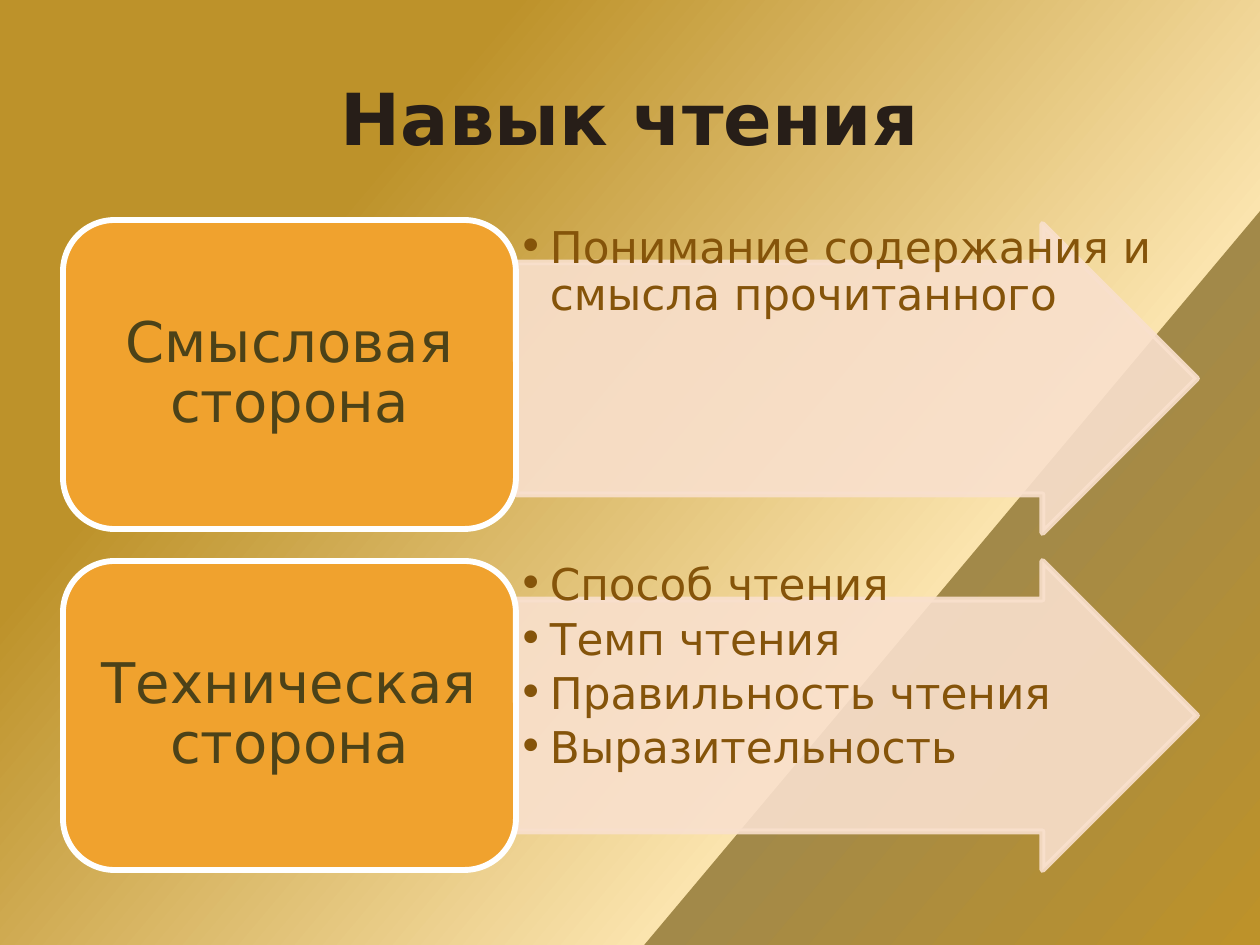
from lxml import etree
from pptx import Presentation
from pptx.dml.color import RGBColor
from pptx.enum.shapes import MSO_SHAPE
from pptx.enum.text import MSO_ANCHOR, PP_ALIGN
from pptx.oxml.ns import qn
from pptx.util import Emu, Pt

ROUNDED = MSO_SHAPE.ROUNDED_RECTANGLE
ARROW = MSO_SHAPE.RIGHT_ARROW
CENTER, LEFT = PP_ALIGN.CENTER, PP_ALIGN.LEFT
TOP, MIDDLE = MSO_ANCHOR.TOP, MSO_ANCHOR.MIDDLE

PX = 914400 // 126
FONT = "DejaVu Sans"
TITLE_ONLY = 5
LINE_WIDTH = Pt(3.35)

# Position in percent and colour; the repeated position makes the sharp edge
BACKGROUND_STOPS = [(0, "BD922A"), (25, "BD922A"), (70, "FBE4AE"),
                    (70, "A28949"), (100, "BD922A")]
BACKGROUND_ANGLE = 40

# Label, bullets, top of the label, drop of the arrow below that top
ROWS = [
    ("Смысловая сторона", ["Понимание содержания и смысла прочитанного"], 220, 4),
    ("Техническая сторона", ["Способ чтения", "Темп чтения", "Правильность чтения",
                             "Выразительность"], 561, 0),
]


def px(value):
    return Emu(value * PX)


def rgb(color):
    return RGBColor.from_string(color)


def place(shape, left, top, width, height):
    shape.left, shape.top = px(left), px(top)
    shape.width, shape.height = px(width), px(height)


def paint_background(slide):
    fill = slide.background.fill
    fill.gradient()
    gradient = slide.background._cSld.find(".//" + qn("a:gradFill"))
    for child in list(gradient):
        gradient.remove(child)
    stops = etree.SubElement(gradient, qn("a:gsLst"))
    for position, color in BACKGROUND_STOPS:
        stop = etree.SubElement(stops, qn("a:gs"), pos=str(position * 1000))
        etree.SubElement(stop, qn("a:srgbClr"), val=color)
    etree.SubElement(gradient, qn("a:lin"), ang=str(BACKGROUND_ANGLE * 60000), scaled="0")


def write(shape, lines, size, color, align, anchor, insets, bold=False, spacing=None):
    frame = shape.text_frame
    frame.word_wrap = True
    frame.vertical_anchor = anchor
    frame.margin_left = frame.margin_right = px(insets[0])
    frame.margin_top = frame.margin_bottom = px(insets[1])
    frame.text = "\n".join(lines)
    for paragraph in frame.paragraphs:
        paragraph.alignment = align
        paragraph.line_spacing = spacing
        for run in paragraph.runs:
            run.font.name, run.font.size, run.font.bold = FONT, Pt(size), bold
            run.font.color.rgb = rgb(color)


def add_bullets(shape, indent):
    for paragraph in shape.text_frame.paragraphs:
        paragraph.space_after = Pt(4)
        properties = paragraph._p.get_or_add_pPr()
        properties.set("marL", str(px(indent)))
        properties.set("indent", str(-px(indent)))
        etree.SubElement(properties, qn("a:buFont"), typeface=FONT)
        etree.SubElement(properties, qn("a:buChar"), char="•")


def add_block(slide, kind, box, fill, line, opacity=100):
    shape = slide.shapes.add_shape(kind, *map(px, box))
    shape.shadow.inherit = False
    shape.fill.solid()
    shape.fill.fore_color.rgb = rgb(fill)
    shape.line.color.rgb = rgb(line)
    shape.line.width = LINE_WIDTH
    if opacity < 100:
        for color in shape._element.spPr.iter(qn("a:srgbClr")):
            etree.SubElement(color, qn("a:alpha"), val=str(opacity * 1000))
    return shape


def add_title(slide, text, box):
    title = slide.shapes.title
    place(title, *box)
    write(title, [text], 41, "271E18", CENTER, MIDDLE, (12, 6), bold=True)


def add_row(slide, label, bullets, box, arrow_drop):
    left, top, width, height = box
    label_width = width * 2 // 5
    arrow_box = (left + label_width, top + arrow_drop, width - label_width, height)

    # Arrow with the bullets over its full box
    arrow = add_block(slide, ARROW, arrow_box, "F9E0CD", "F9E0CD", opacity=90)
    arrow.adjustments[0], arrow.adjustments[1] = 0.75, 0.5
    details = slide.shapes.add_textbox(*map(px, arrow_box))
    write(details, bullets, 25, "85540A", LEFT, TOP, (2, 2), spacing=0.9)
    add_bullets(details, 32)

    # Rounded label
    block = add_block(slide, ROUNDED, (left, top, label_width, height), "F0A22E", "FFFFFF")
    write(block, [label], 32, "4C4218", CENTER, MIDDLE, (2, 2), spacing=0.9)


def main():
    presentation = Presentation()
    presentation.slide_width, presentation.slide_height = px(1260), px(945)
    slide = presentation.slides.add_slide(presentation.slide_layouts[TITLE_ONLY])
    paint_background(slide)
    add_title(slide, "Навык чтения", (63, 38, 1134, 157))
    for label, bullets, top, arrow_drop in ROWS:
        add_row(slide, label, bullets, (63, top, 1134, 309), arrow_drop)
    presentation.save("out.pptx")


if __name__ == "__main__":
    main()
